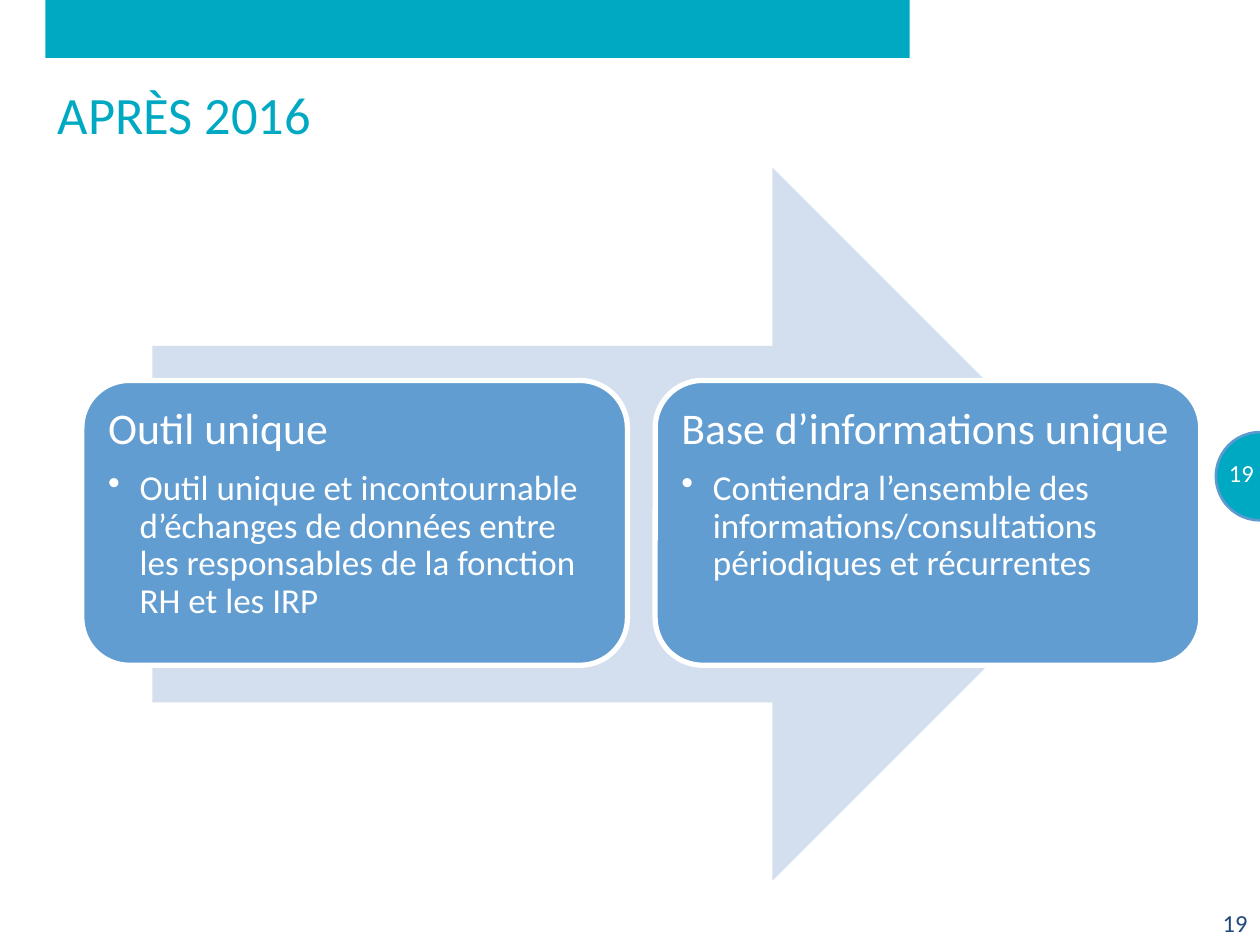
from lxml.etree import SubElement
from pptx import Presentation
from pptx.dml.color import RGBColor
from pptx.enum.shapes import MSO_SHAPE
from pptx.enum.text import MSO_ANCHOR, PP_ALIGN
from pptx.oxml.ns import qn
from pptx.util import Inches, Pt

TEAL = RGBColor(0x00, 0xA9, 0xC2)
BLUE = RGBColor(0x62, 0x9D, 0xD1)
RING_BLUE = RGBColor(0x5D, 0x9A, 0xCF)
PALE_BLUE = RGBColor(0xD3, 0xDF, 0xEE)
NAVY = RGBColor(0x1F, 0x49, 0x7D)
WHITE = RGBColor(0xFF, 0xFF, 0xFF)

CARDS = [
    ("Outil unique",
     "Outil unique et incontournable d’échanges de données entre "
     "les responsables de la fonction RH et les IRP"),
    ("Base d’informations unique",
     "Contiendra l’ensemble des informations/consultations "
     "périodiques et récurrentes"),
]


class SlideBuilder:
    """Places elements on a grid of 100 columns by 75 rows."""

    font_name = "Calibri"
    columns, rows = 100, 75

    def __init__(self, deck):
        self.cell_width = deck.slide_width / self.columns
        self.cell_height = deck.slide_height / self.rows
        self.page = deck.slides.add_slide(deck.slide_layouts[6])

    def place(self, left, top, width, height):
        return (round(left * self.cell_width), round(top * self.cell_height),
                round(width * self.cell_width), round(height * self.cell_height))

    def shape(self, kind, area, fill, line=None, line_width=0):
        shape = self.page.shapes.add_shape(kind, *self.place(*area))
        shape.shadow.inherit = False
        shape.fill.solid()
        shape.fill.fore_color.rgb = fill
        if line is None:
            shape.line.fill.background()
        else:
            shape.line.color.rgb = line
            shape.line.width = Pt(line_width)
        return shape

    def style(self, para, size, color, align=PP_ALIGN.LEFT):
        para.alignment = align
        para.font.name = self.font_name
        para.font.size = Pt(size)
        para.font.color.rgb = color

    def label(self, area, text, size, color, align=PP_ALIGN.LEFT,
              anchor=MSO_ANCHOR.TOP):
        box = self.page.shapes.add_textbox(*self.place(*area))
        frame = box.text_frame
        frame.word_wrap = True
        frame.vertical_anchor = anchor
        frame.text = text
        self.style(frame.paragraphs[0], size, color, align)

    def page_number(self, area, color):
        self.label(area, "19", 14, color, PP_ALIGN.RIGHT, MSO_ANCHOR.MIDDLE)

    def bullet(self, para, indent):
        properties = para._p.get_or_add_pPr()
        properties.set("marL", str(indent))
        properties.set("indent", str(-indent))
        SubElement(properties, qn("a:buChar"), char="•")

    def card(self, area, heading, detail):
        card = self.shape(MSO_SHAPE.ROUNDED_RECTANGLE, area, BLUE, WHITE, 3)
        frame = card.text_frame
        frame.word_wrap = True
        frame.vertical_anchor = MSO_ANCHOR.TOP
        frame.margin_left = frame.margin_right = Inches(0.1)
        frame.margin_top = frame.margin_bottom = Inches(0.1)

        title = frame.paragraphs[0]
        title.text = heading
        title.space_after = Pt(9)
        self.style(title, 25, WHITE)

        point = frame.add_paragraph()
        point.text = detail
        point.level = 1
        self.bullet(point, Inches(0.25))
        point.space_after = Pt(3)
        self.style(point, 20, WHITE)

        for para in frame.paragraphs:
            para.line_spacing = 0.9


def main():
    deck = Presentation()
    deck.slide_width, deck.slide_height = Inches(10), Inches(7.5)
    slide = SlideBuilder(deck)

    slide.shape(MSO_SHAPE.RECTANGLE, (3.6, 0, 68.6, 4.6), TEAL)
    slide.shape(MSO_SHAPE.OVAL, (96.5, 34.3, 7, 7), TEAL, RING_BLUE, 1.5)
    slide.page_number((96.2, 35.5, 4.3, 4), WHITE)
    slide.label((3.6, 6, 92.9, 7.7), "APRÈS 2016", 30, TEAL)
    slide.page_number((88.3, 71.4, 11.7, 3.6), NAVY)

    slide.shape(MSO_SHAPE.RIGHT_ARROW, (12.1, 13.3, 77.5, 56.6), PALE_BLUE)
    card_width, gap = 43.3, 2.2
    for index, (heading, detail) in enumerate(CARDS):
        left = 6.5 + index * (card_width + gap)
        slide.card((left, 30.2, card_width, 22.6), heading, detail)

    deck.save("out.pptx")


if __name__ == "__main__":
    main()
